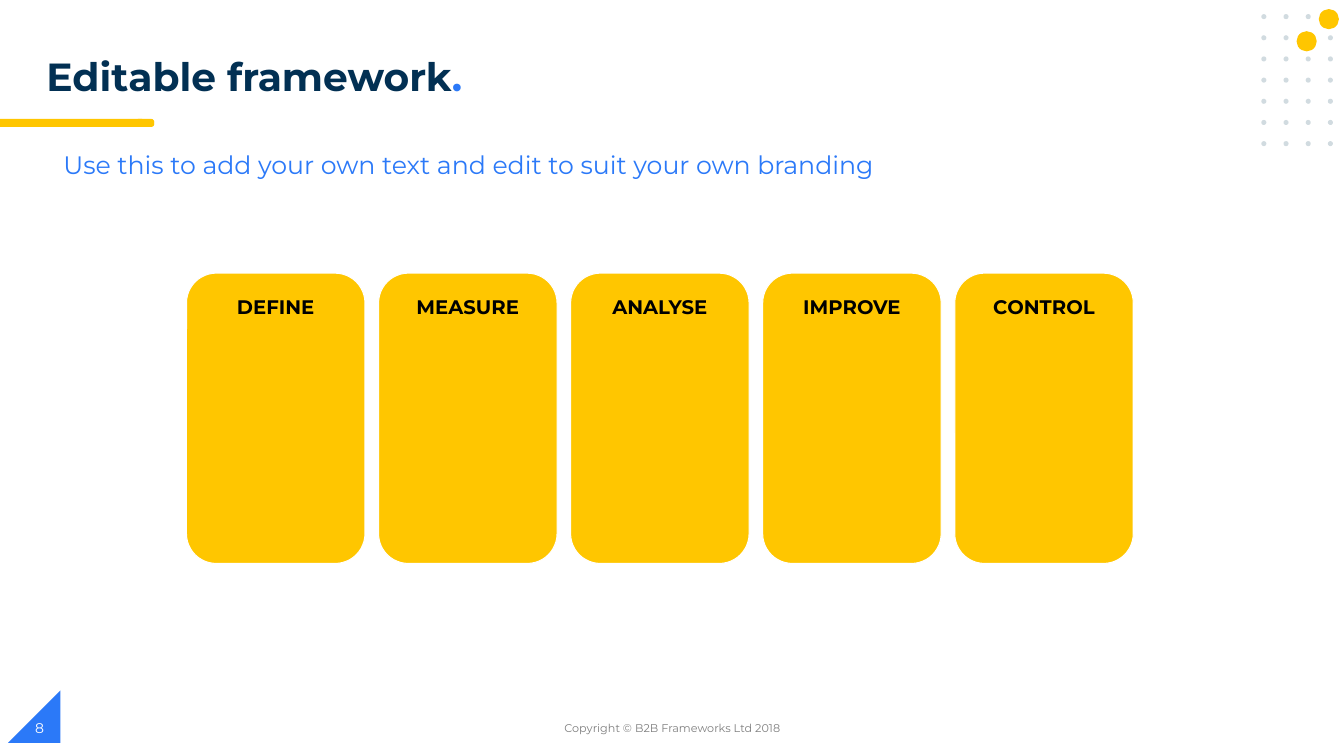
from dataclasses import dataclass

import pptx
import pptx.dml.color
import pptx.enum.shapes
import pptx.enum.text
import pptx.util

Inches = pptx.util.Inches
SHAPE = pptx.enum.shapes.MSO_SHAPE
ALIGN = pptx.enum.text.PP_ALIGN
ANCHOR = pptx.enum.text.MSO_ANCHOR


@dataclass(frozen=True)
class Theme:
    """Colours, font and type sizes of the deck."""
    navy: str = "023053"
    blue: str = "2B79F8"
    yellow: str = "FFC600"
    dot: str = "D1DBE0"
    grey: str = "7F7F7F"
    black: str = "000000"
    white: str = "FFFFFF"
    font: str = "Montserrat"
    title: int = 28
    subtitle: int = 18
    label: int = 14
    number: int = 10
    footer: int = 8


THEME = Theme()


def rgb(color):
    """Return the colour object for a hex string."""
    return pptx.dml.color.RGBColor.from_string(color)


def add_filled(slide, kind, box, color):
    """Add a flat preset shape without outline or shadow."""
    sp = slide.shapes.add_shape(kind, *map(Inches, box))
    sp.shadow.inherit = False
    sp.fill.solid()
    sp.fill.fore_color.rgb = rgb(color)
    sp.line.fill.background()
    return sp


def style(p, size, color, bold=False, align=ALIGN.LEFT):
    """Set the font and alignment of a paragraph."""
    p.alignment = align
    p.font.name = THEME.font
    p.font.size = pptx.util.Pt(size)
    p.font.bold = bold
    p.font.color.rgb = rgb(color)


def add_text(slide, box, text, size, color, bold=False, align=ALIGN.LEFT,
             anchor=ANCHOR.TOP, pad=0.05):
    """Add a wrapped one-paragraph text box."""
    tf = slide.shapes.add_textbox(*map(Inches, box)).text_frame
    tf.word_wrap = True
    tf.vertical_anchor = anchor
    tf.margin_top = tf.margin_bottom = Inches(pad)
    p = tf.paragraphs[0]
    p.text = text
    style(p, size, color, bold, align)


def add_dot_grid(slide, left, top, rows=7, cols=4):
    """Add the corner dot pattern with its two large dots."""
    pitch_x, pitch_y, small, large = 0.22, 0.21, 0.05, 0.2
    for row in range(rows):
        for col in range(cols):
            box = (left + col * pitch_x, top + row * pitch_y, small, small)
            add_filled(slide, SHAPE.OVAL, box, THEME.dot)
    for dx, dy in ((0.57, -0.05), (0.35, 0.17)):
        add_filled(slide, SHAPE.OVAL, (left + dx, top + dy, large, large), THEME.yellow)


def add_underline(slide, top):
    """Add the yellow bar with a rounded right end."""
    add_filled(slide, SHAPE.FLOWCHART_TERMINATOR, (1.34, top, 0.19, 0.06), THEME.yellow)
    add_filled(slide, SHAPE.RECTANGLE, (0, top, 1.41, 0.06), THEME.yellow)


def add_header(slide, left, top, width):
    """Fill the title and add its underline and subtitle."""
    title = slide.shapes.title
    title.left, title.top = Inches(left), Inches(top)
    title.width, title.height = Inches(5.64), Inches(0.6)
    tf = title.text_frame
    tf.auto_size = pptx.enum.text.MSO_AUTO_SIZE.NONE
    tf.vertical_anchor = ANCHOR.TOP
    p = tf.paragraphs[0]
    p.line_spacing = 0.9
    style(p, THEME.title, THEME.navy, bold=True)
    p.add_run().text = "Editable framework"
    r = p.add_run()
    r.text = "."
    r.font.color.rgb = rgb(THEME.blue)
    for offset in (0.66, 0.68):
        add_underline(slide, top + offset)
    add_text(slide, (left + 0.17, top + 0.91, width, 0.48),
             "Use this to add your own text and edit to suit your own branding",
             THEME.subtitle, THEME.blue)


def add_footer(slide, top):
    """Add the corner triangle, page number and copyright line."""
    corner = add_filled(slide, SHAPE.RIGHT_TRIANGLE, (0.08, top, 0.52, 0.52), THEME.blue)
    corner._element.spPr.xfrm.set("flipH", "1")
    add_text(slide, (4.42, top + 0.17, 4.5, 0.4), "Copyright © B2B Frameworks Ltd 2018",
             THEME.footer, THEME.grey, align=ALIGN.CENTER, anchor=ANCHOR.MIDDLE)
    add_text(slide, (0.25, top + 0.17, 3, 0.4), "8",
             THEME.number, THEME.white, anchor=ANCHOR.MIDDLE)


def add_cards(slide, left, top, width, height, labels):
    """Add a row of equal rounded cards, each with a heading."""
    card_width = 1.77
    pitch = (width - card_width) / (len(labels) - 1)
    for i, label in enumerate(labels):
        x = left + i * pitch
        card = add_filled(slide, SHAPE.ROUNDED_RECTANGLE,
                          (x, top, card_width, height), THEME.yellow)
        card.adjustments[0] = 0.167
        card.line.color.rgb = rgb(THEME.white)
        card.line.width = pptx.util.Pt(0.75)
        add_text(slide, (x, top + 0.12, card_width, 0.4), label, THEME.label,
                 THEME.black, bold=True, align=ALIGN.CENTER, pad=0.1)


def main():
    """Build and save the framework slide."""
    prs = pptx.Presentation()
    prs.slide_width, prs.slide_height = Inches(13.33), Inches(7.5)
    slide = prs.slides.add_slide(prs.slide_layouts[5])
    add_dot_grid(slide, 12.51, 0.14)
    add_header(slide, 0.36, 0.52, 8.59)
    add_footer(slide, 6.85)
    add_cards(slide, 1.85, 2.71, 9.39, 2.88,
              ("DEFINE", "MEASURE", "ANALYSE", "IMPROVE", "CONTROL"))
    prs.save("out.pptx")


if __name__ == "__main__":
    main()
